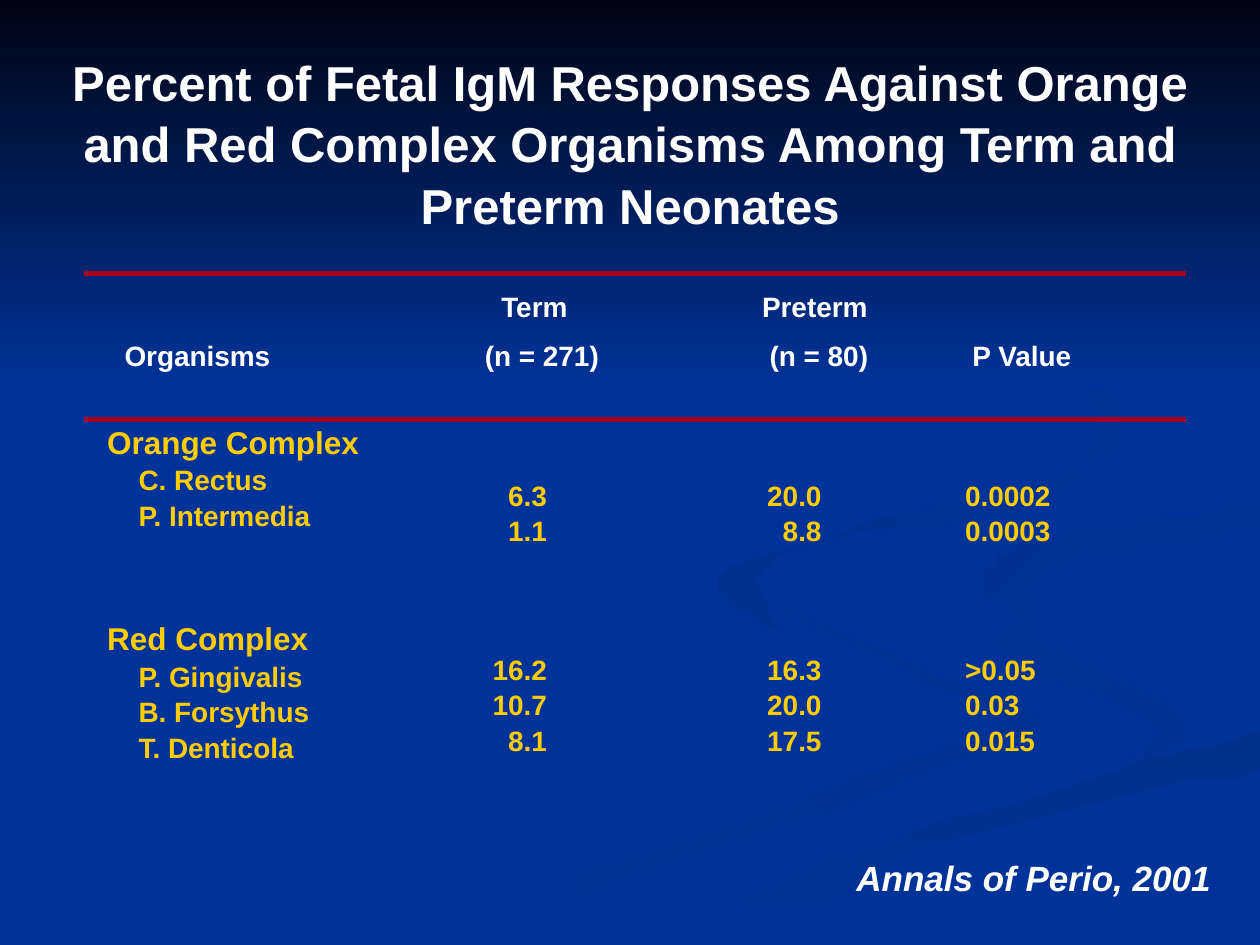
from lxml import etree
from pptx import Presentation
from pptx.dml.color import RGBColor
from pptx.enum.shapes import MSO_CONNECTOR, MSO_SHAPE
from pptx.enum.text import MSO_ANCHOR, PP_ALIGN
from pptx.oxml.ns import qn
from pptx.util import Inches, Pt

LEFT, MID, RIGHT = PP_ALIGN.LEFT, PP_ALIGN.CENTER, PP_ALIGN.RIGHT
CENTER = MSO_ANCHOR.MIDDLE
RECT = MSO_SHAPE.RECTANGLE
LINE = MSO_CONNECTOR.STRAIGHT

COLS, ROWS = 100, 75
UNIT = Inches(10) // COLS
STEPS = 6
FONT = "Arial"
PLAIN = "{2D5ABB26-0587-4C30-8999-92F81FD0307C}"
HEX = {"base": "003399", "night": "000514", "dusk": "003091",
       "deep": "002F8C", "faint": "003193", "rule": "A50021",
       "text": "FFFFFF", "gold": "FFCC00"}

RIBBONS = [
    ("base", "faint", 0, [(57, 46), (78, 55), (79, 59), (36, 75),
                          (30, 75), (76, 59), (76, 55)]),
    ("base", "faint", 45, [(72, 46), (91, 55), (94, 58), (89, 61),
                           (91, 57), (75, 50)]),
    ("deep", "base", 90, [(50, 75), (70, 67), (100, 58), (100, 61),
                          (78, 66), (57, 75)]),
    ("dusk", "base", 45, [(78, 46), (83, 43), (100, 40), (100, 42),
                          (84, 45), (82, 50)]),
    ("deep", "base", 45, [(86, 29), (89, 34), (84, 38), (58, 45),
                          (62, 50), (62, 44), (85, 39)]),
]
GROUPS = [
    ("Orange Complex", 2, [("C. Rectus", "6.3", "20.0", "0.0002"),
                           ("P. Intermedia", "1.1", "8.8", "0.0003")]),
    ("Red Complex", 3.8, [("P. Gingivalis", "16.2", "16.3", ">0.05"),
                          ("B. Forsythus", "10.7", "20.0", "0.03"),
                          ("T. Denticola", "8.1", "17.5", "0.015")]),
]
HEADS = [("\tTerm\tPreterm", (29.9, 50.6)),
         ("Organisms\t(n = 271)\t(n = 80)\tP Value", (28.6, 51.2, 67.3))]
WIDTHS, HEIGHTS = (28.8, 20, 19.3, 16.9), (13.8, 21)
PADS = (1, 12.9, 10.4, 1)


def grid(*vals):
    """Turn grid units into lengths."""
    return [round(val * UNIT) for val in vals]


def tint(name):
    """Look up a colour."""
    return RGBColor.from_string(HEX[name])


def write(para, text, size, color="text", align=LEFT, gap=0, slant=None):
    """Add one bold run to a paragraph."""
    para.alignment, para.space_before = align, Pt(gap)
    run = para.add_run()
    run.text = text
    font = run.font
    font.name, font.size, font.bold, font.italic = FONT, Pt(size), True, slant
    font.color.rgb = tint(color)


def fresh(frame, first):
    """Give the first paragraph, or a new one."""
    return frame.paragraphs[0] if first else frame.add_paragraph()


def shade(shape, start, end, angle):
    """Fill a shape with a two-colour gradient."""
    shape.shadow.inherit = False
    shape.line.fill.background()
    shape.fill.gradient()
    shape.fill.gradient_angle = -angle % 360
    for stop, name in zip(shape.fill.gradient_stops, (start, end)):
        stop.color.rgb = tint(name)


def blend(a, b, c, d, t):
    """Find a value between b and c on a smooth curve."""
    bend = (2 * a - 5 * b + 4 * c - d) * t + (3 * b - a - 3 * c + d) * t * t
    return b + (c - a + bend) * t / 2


def curve(knots):
    """Run a smooth closed curve through the knots, within the slide."""
    count, points = len(knots), []
    for i in range(count):
        near = [knots[(i + k) % count] for k in (-1, 0, 1, 2)]
        for step in range(STEPS):
            x, y = (blend(*vals, step / STEPS) for vals in zip(*near))
            points.append((min(x, COLS), min(y, ROWS)))
    return points


def ribbon(slide, start, end, angle, knots):
    """Draw one curved band."""
    points = curve(knots)
    path = slide.shapes.build_freeform(*points[0], scale=UNIT)
    path.add_line_segments(points[1:], close=True)
    shade(path.convert_to_shape(), start, end, angle)


def rule(slide, row):
    """Draw a line across the table."""
    line = slide.shapes.add_connector(LINE, *grid(6.7, row, 94.1, row))
    line.line.color.rgb, line.line.width = tint("rule"), Pt(3)
    etree.SubElement(line._element.spPr, qn("a:effectLst"))


def textbox(slide, *area):
    """Add a wrapping text box."""
    frame = slide.shapes.add_textbox(*grid(*area)).text_frame
    frame.word_wrap = True
    return frame


def heading(slide, text):
    """Place and fill the title."""
    title = slide.shapes.title
    title.left, title.top, title.width, title.height = grid(2.2, 5, 95.6, 12.5)
    title.text_frame.vertical_anchor = CENTER
    para = title.text_frame.paragraphs[0]
    para.line_spacing = 1.05
    write(para, text, 28, align=MID)


def header(slide):
    """Write the column heads on tab stops."""
    frame = textbox(slide, 8.9, 22.5, 84.4, 7.7)
    for row, (text, stops) in enumerate(HEADS):
        para = fresh(frame, row == 0)
        write(para, text, 16, gap=9 * row)
        tabs = etree.SubElement(para._p.get_or_add_pPr(), qn("a:tabLst"))
        for pos in grid(*stops):
            etree.SubElement(tabs, qn("a:tab"), pos=str(pos), algn="l")


def fill(cell, col, title, top, lines):
    """Fill one cell with a group's names or values."""
    frame = cell.text_frame
    cell.fill.background()
    cell.margin_top, cell.margin_right = grid(6.4 if col else top, PADS[col])
    cell.margin_left = grid(1)[0]
    if col == 0:
        write(frame.paragraphs[0], title, 18, "gold")
    align = RIGHT if col in (1, 2) else LEFT
    for row, line in enumerate(lines):
        first = col > 0 and row == 0
        para = fresh(frame, first)
        write(para, line[col], 16, "gold", align, 0 if first else 2.5)
        if col == 0:
            para._p.get_or_add_pPr().set("marL", str(grid(2.5)[0]))


def results(slide):
    """Build the table of organisms."""
    area = grid(7.5, 31.8, sum(WIDTHS), sum(HEIGHTS))
    table = slide.shapes.add_table(len(HEIGHTS), len(WIDTHS), *area).table
    table.first_row = table.horz_banding = False
    table._tbl.tblPr.find(qn("a:tableStyleId")).text = PLAIN
    for col, width in zip(table.columns, grid(*WIDTHS)):
        col.width = width
    for row, height in zip(table.rows, grid(*HEIGHTS)):
        row.height = height
    for row, group in enumerate(GROUPS):
        for col in range(len(WIDTHS)):
            fill(table.cell(row, col), col, *group)


def main():
    """Build the slide and save it."""
    deck = Presentation()
    deck.slide_width, deck.slide_height = grid(COLS, ROWS)
    slide = deck.slides.add_slide(deck.slide_layouts[5])
    slide.background.fill.solid()
    slide.background.fill.fore_color.rgb = tint("base")
    for band in RIBBONS:
        ribbon(slide, *band)
    sky = slide.shapes.add_shape(RECT, *grid(0, 0, COLS, 30.8))
    shade(sky, "night", "base", 90)
    slide.shapes._spTree.append(slide.shapes.title._element)
    heading(slide, "Percent of Fetal IgM Responses Against Orange and Red "
                   "Complex Organisms Among Term and Preterm Neonates")
    results(slide)
    rule(slide, 33.3)
    rule(slide, 21.7)
    header(slide)
    credit = textbox(slide, 46.7, 67.5, 50.4, 4.3)
    write(credit.paragraphs[0], "Annals of Perio, 2001", 20, align=RIGHT,
          slant=True)
    deck.save("out.pptx")


if __name__ == "__main__":
    main()
